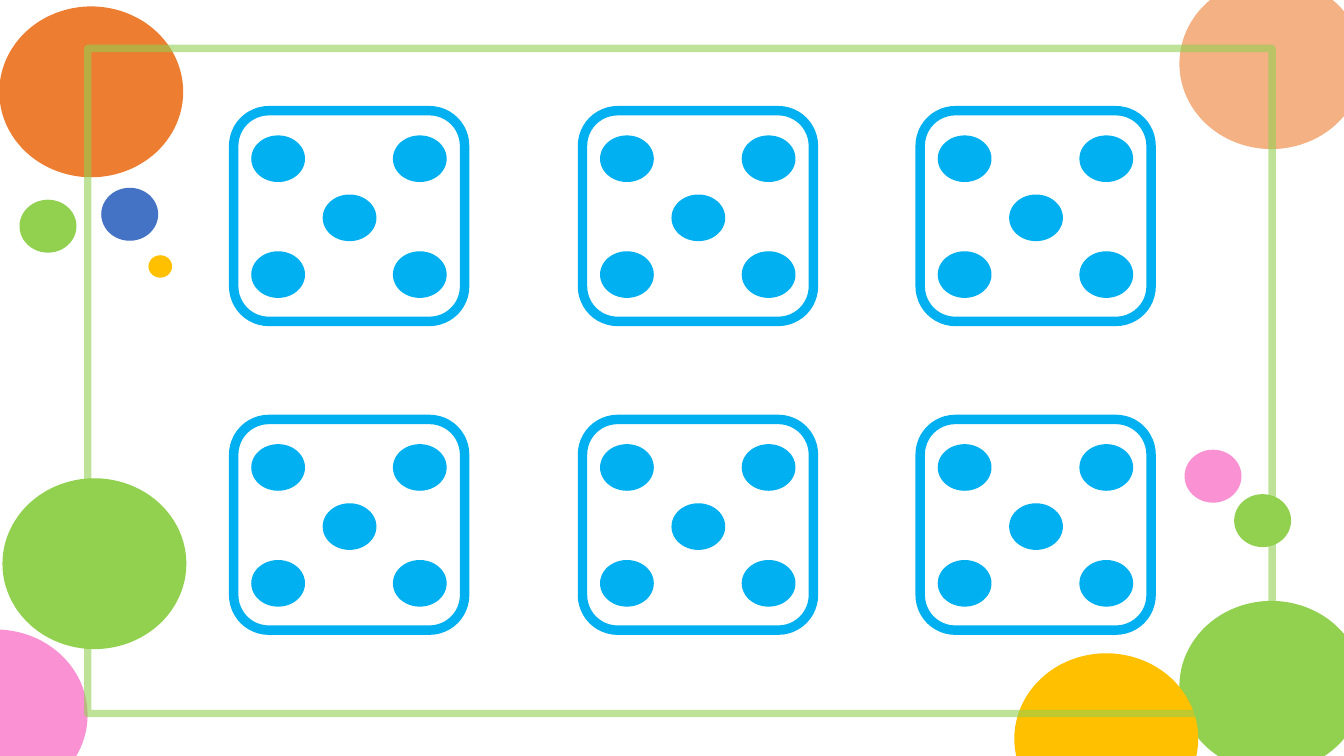
from lxml import etree
from pptx import Presentation
from pptx.dml.color import RGBColor
from pptx.enum.shapes import MSO_SHAPE
from pptx.oxml.ns import qn
from pptx.util import Cm, Pt

OVAL = MSO_SHAPE.OVAL
RECT = MSO_SHAPE.RECTANGLE
ROUND = MSO_SHAPE.ROUNDED_RECTANGLE

ORANGE, PEACH, GOLD = "ED7D31", "F4B183", "FFC000"
GREEN, PINK, BLUE, SKY = "92D050", "F991D3", "4472C4", "00B0F0"

deck = Presentation()
deck.slide_width, deck.slide_height = Cm(33.87), Cm(19.05)
slide = deck.slides.add_slide(deck.slide_layouts[6])


def draw(kind, left, top, size, color, width=1, filled=True):
    wide, high = size
    shape = slide.shapes.add_shape(kind, Cm(left), Cm(top), Cm(wide), Cm(high))
    shape.shadow.inherit = False
    if filled:
        shape.fill.solid()
        shape.fill.fore_color.rgb = RGBColor.from_string(color)
    else:
        shape.fill.background()
    shape.line.color.rgb = RGBColor.from_string(color)
    shape.line.width = Pt(width)
    return shape


# Confetti circles
BIG, SMALL, TINY = (4.6, 4.27), (1.4, 1.3), (0.56, 0.53)
circles = [
    (0, 0.18, BIG, ORANGE),
    (29.74, 15.16, BIG, GREEN),
    (29.74, -0.53, BIG, PEACH),
    (25.58, 16.48, BIG, GOLD),
    (31.12, 12.47, SMALL, GREEN),
    (29.87, 11.35, SMALL, PINK),
    (-2.41, 15.88, BIG, PINK),
    (0.08, 12.07, BIG, GREEN),
    (0.51, 5.05, SMALL, GREEN),
    (2.57, 4.75, SMALL, BLUE),
    (3.76, 6.45, TINY, GOLD),
]
for left, top, size, color in circles:
    draw(OVAL, left, top, size, color)

# See-through frame
frame = draw(RECT, 2.21, 1.22, (29.85, 16.76), GREEN, 5.25, False)
tint = frame.line._ln.find(".//" + qn("a:srgbClr"))
etree.SubElement(tint, qn("a:alpha")).set("val", "58000")

# Dice, each showing five
DIE, PIP = (5.82, 5.31), (1.32, 1.14)
PIPS = [(0.46, 0.64), (4.03, 0.64), (0.46, 3.56), (4.03, 3.56), (2.26, 2.13)]
for left in (5.89, 14.68, 23.19):
    for top in (2.79, 10.57):
        draw(ROUND, left, top, DIE, SKY, 6.75, False)
        for across, down in PIPS:
            draw(OVAL, left + across, top + down, PIP, SKY)

deck.save("out.pptx")
